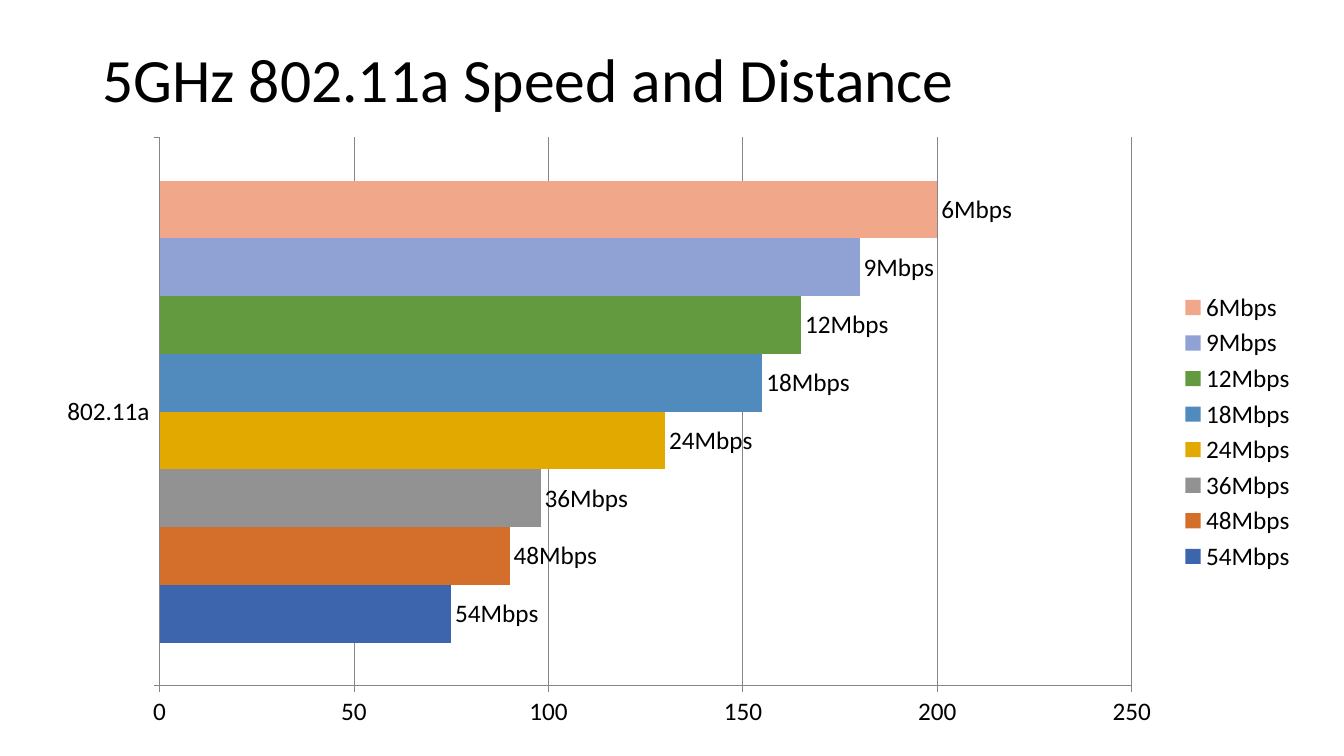
"""Build a slide with a bar chart of 802.11a speeds by distance."""
from lxml.etree import SubElement
from pptx import Presentation
from pptx.chart.data import CategoryChartData
from pptx.dml.color import RGBColor
from pptx.enum.chart import XL_CHART_TYPE, XL_LABEL_POSITION, XL_LEGEND_POSITION, XL_TICK_MARK
from pptx.enum.text import MSO_ANCHOR
from pptx.oxml.ns import qn
from pptx.util import Pt

BLACK = RGBColor(0x00, 0x00, 0x00)
GRAY = RGBColor(0x86, 0x86, 0x86)
FONT = "Calibri"
TITLE = "5GHz 802.11a Speed and Distance"
CATEGORY = "802.11a"
SPEEDS = [
    ("54Mbps", 75, RGBColor(0x3D, 0x65, 0xAE)),
    ("48Mbps", 90, RGBColor(0xD3, 0x6F, 0x2B)),
    ("36Mbps", 98, RGBColor(0x92, 0x92, 0x92)),
    ("24Mbps", 130, RGBColor(0xE2, 0xAA, 0x00)),
    ("18Mbps", 155, RGBColor(0x51, 0x8B, 0xBD)),
    ("12Mbps", 165, RGBColor(0x63, 0x9A, 0x3F)),
    ("9Mbps", 180, RGBColor(0x90, 0xA1, 0xD4)),
    ("6Mbps", 200, RGBColor(0xF1, 0xA7, 0x8A)),
]
PAGE_SIZE = (960, 540)
TITLE_BOX = (66, 28.8, 828, 60.5)
CHART_BOX = (31, 89.3, 902, 438.5)
PLOT_LAYOUT = {"layoutTarget": "inner", "xMode": "edge", "yMode": "edge",
               "x": 0.092, "y": 0.02, "w": 0.77, "h": 0.894}
LABEL_FORMAT = {"show_series_name": True, "show_value": False,
                "position": XL_LABEL_POSITION.OUTSIDE_END}
AXIS_FORMAT = {"major_tick_mark": XL_TICK_MARK.OUTSIDE,
               "minor_tick_mark": XL_TICK_MARK.NONE}
SCALE_FORMAT = {"minimum_scale": 0, "maximum_scale": 250, "major_unit": 50,
                "has_major_gridlines": True}


def apply(target, values):
    for name, value in values.items():
        setattr(target, name, value)


def style_font(font, size):
    apply(font, {"name": FONT, "size": Pt(size), "bold": False})
    font.color.rgb = BLACK


def style_line(line):
    line.color.rgb = GRAY
    line.width = Pt(0.75)


def add_title(page):
    box = page.shapes.add_textbox(*map(Pt, TITLE_BOX))
    apply(box.text_frame, {"word_wrap": True, "vertical_anchor": MSO_ANCHOR.MIDDLE})
    para = box.text_frame.paragraphs[0]
    para.line_spacing = 0.9
    span = para.add_run()
    span.text = TITLE
    style_font(span.font, 44)


def place_plot(chart):
    area = chart.element.find(".//" + qn("c:plotArea"))
    for old in area.findall(qn("c:layout")):
        area.remove(old)
    layout = SubElement(area, qn("c:layout"))
    area.insert(0, layout)
    manual = SubElement(layout, qn("c:manualLayout"))
    for name, value in PLOT_LAYOUT.items():
        SubElement(manual, qn("c:" + name)).set("val", str(value))


def add_speed_chart(page):
    data = CategoryChartData()
    data.categories = [CATEGORY]
    for name, distance, _ in SPEEDS:
        data.add_series(name, [distance])
    chart = page.shapes.add_chart(
        XL_CHART_TYPE.BAR_CLUSTERED, *map(Pt, CHART_BOX), data).chart
    apply(chart, {"has_title": False, "has_legend": True})
    apply(chart.legend, {"position": XL_LEGEND_POSITION.RIGHT, "include_in_layout": False})
    style_font(chart.font, 18)
    plot = chart.plots[0]
    apply(plot, {"gap_width": 150, "overlap": 0, "vary_by_categories": False})
    for series, (_, _, color) in zip(plot.series, SPEEDS):
        series.format.fill.solid()
        series.format.fill.fore_color.rgb = color
        apply(series.data_labels, LABEL_FORMAT)
        style_font(series.data_labels.font, 18)
    for axis in (chart.category_axis, chart.value_axis):
        apply(axis, AXIS_FORMAT)
        style_line(axis.format.line)
    apply(chart.value_axis, SCALE_FORMAT)
    style_line(chart.value_axis.major_gridlines.format.line)
    place_plot(chart)


def main():
    deck = Presentation()
    deck.slide_width, deck.slide_height = map(Pt, PAGE_SIZE)
    page = deck.slides.add_slide(deck.slide_layouts[6])
    add_title(page)
    add_speed_chart(page)
    deck.save("out.pptx")


if __name__ == "__main__":
    main()
